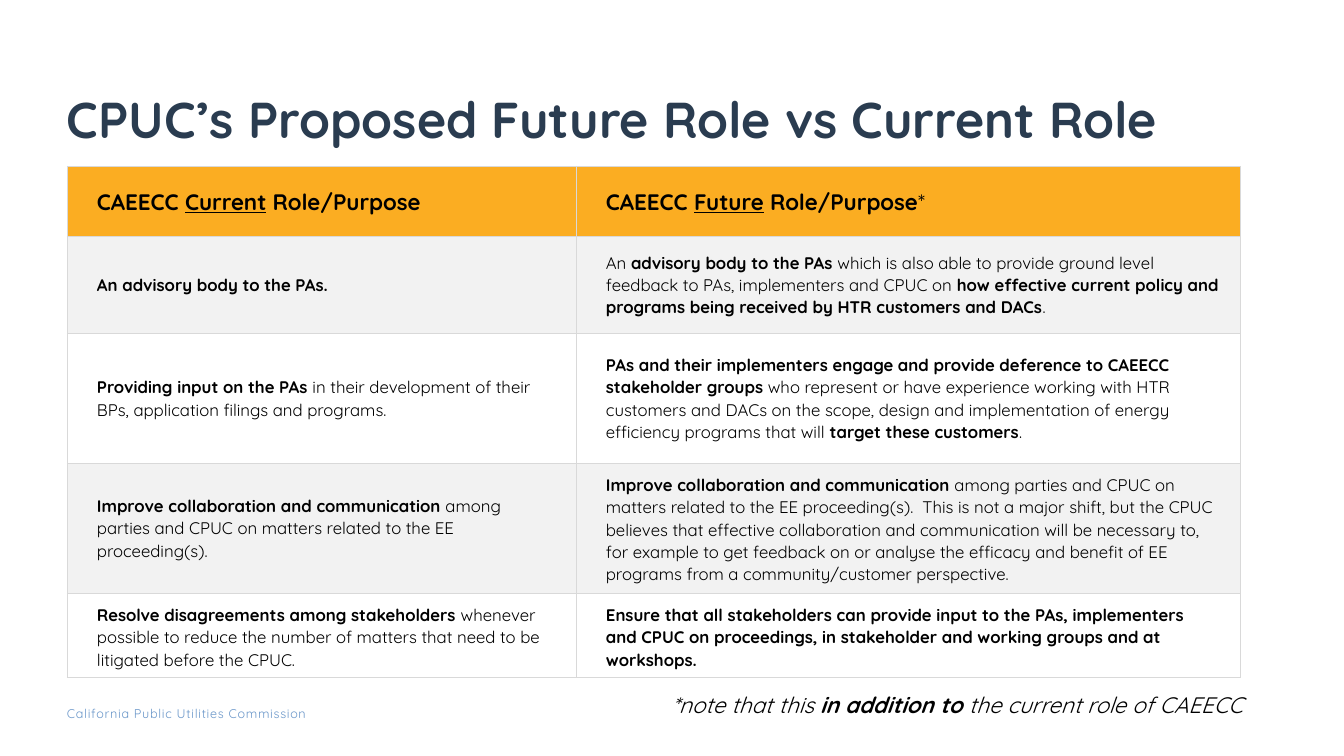
import pptx
import pptx.dml.color
import pptx.enum.text
import pptx.oxml
import pptx.oxml.ns
import pptx.util

RGBColor = pptx.dml.color.RGBColor
Anchor = pptx.enum.text.MSO_ANCHOR
Align = pptx.enum.text.PP_ALIGN
NAVY = RGBColor(0x2A, 0x3C, 0x50)
BLUE = RGBColor(0x69, 0x96, 0xC9)
GOLD = RGBColor(0xFB, 0xAD, 0x22)
GRAY = RGBColor(0xF2, 0xF2, 0xF2)
RULE = RGBColor(0xD9, 0xD9, 0xD9)
WHITE = RGBColor(0xFF, 0xFF, 0xFF)
BLACK = RGBColor(0, 0, 0)
FONT = "Quicksand"
SCALE = 914400 / 100.8
COLS = (509, 664)
ROWS = (70, 97, 130, 130, 81)
PAD = (30, 10, 20, 10)

HEADS = (
    [("CAEECC ", "b"), ("Current", "bu"), (" Role/Purpose", "b")],
    [("CAEECC ", "b"), ("Future", "bu"), (" Role/Purpose", "b"), ("*", "")],
)
ROLES = (
    ([("An advisory body to the PAs.", "b")],
     [("An ", ""), ("advisory body to the PAs ", "b"),
      ("which is also able to provide ground level feedback to PAs, "
       "implementers and CPUC on ", ""),
      ("how effective current policy and programs being received by "
       "HTR customers and DACs", "b"), (".", "")]),
    ([("Providing input on the PAs ", "b"),
      ("in their development of their BPs, application filings and programs.", "")],
     [("PAs and their implementers engage and provide deference to CAEECC "
       "stakeholder groups", "b"),
      (" who represent or have experience working with HTR customers and DACs "
       "on the scope, design and implementation of energy efficiency programs "
       "that will ", ""), ("target these customers", "b"), (".", "")]),
    ([("Improve collaboration and communication", "b"),
      (" among parties and CPUC on matters related to the EE proceeding(s).", "")],
     [("Improve collaboration and communication", "b"),
      (" among parties and CPUC on matters related to the EE proceeding(s).  "
       "This is not a major shift, but the CPUC believes that "
       "effective collaboration and communication will be necessary to, "
       "for example to get feedback on or analyse the efficacy and benefit of "
       "EE programs from a community/customer perspective.", "")]),
    ([("Resolve disagreements among stakeholders ", "b"),
      ("whenever possible to reduce the number of matters that need to be "
       "litigated before the CPUC.", "")],
     [("Ensure that all stakeholders can provide input", "b"),
      (" to the PAs, implementers and CPUC on proceedings, in stakeholder and "
       "working groups and at workshops.", "b")]),
)


def px(num):
    """Turn px into EMU."""
    return pptx.util.Emu(round(num * SCALE))


def place(shape, box):
    """Move a shape to a px box."""
    shape.left, shape.top, shape.width, shape.height = map(px, box)


def inset(item, pad):
    """Set the left, top, right and bottom margins."""
    (item.margin_left, item.margin_top,
     item.margin_right, item.margin_bottom) = map(px, pad)


def write(para, runs, size, color):
    """Add styled runs to a paragraph."""
    for text, style in runs:
        run = para.add_run()
        run.text = text
        font = run.font
        font.name = FONT
        font.size = pptx.util.Pt(size)
        font.color.rgb = color
        font.bold = "b" in style
        font.italic = "i" in style
        font.underline = "u" in style


def edge(cell):
    """Draw thin rules on the four sides of a cell."""
    props = cell._tc.get_or_add_tcPr()
    space = pptx.oxml.ns.nsdecls("a")
    for spot, side in enumerate(("lnL", "lnR", "lnT", "lnB")):
        line = pptx.oxml.parse_xml(
            f'<a:{side} {space} w="3175"><a:solidFill>'
            f'<a:srgbClr val="{RULE}"/></a:solidFill></a:{side}>')
        props.insert(spot, line)


def title(slide, box):
    """Fill the title placeholder."""
    shape = slide.shapes.title
    place(shape, box)
    frame = shape.text_frame
    frame.word_wrap = True
    frame.auto_size = pptx.enum.text.MSO_AUTO_SIZE.NONE
    frame.vertical_anchor = Anchor.BOTTOM
    inset(frame, (0, 5, 10, 5))
    para = frame.paragraphs[0]
    para.alignment = Align.LEFT
    para.line_spacing = 0.9
    write(para, [("CPUC’s Proposed Future Role vs Current Role", "b")], 36, NAVY)


def grid(slide, left, top):
    """Build the table of current and future roles."""
    box = map(px, (left, top, sum(COLS), sum(ROWS)))
    table = slide.shapes.add_table(len(ROWS), len(COLS), *box).table
    table.first_row = table.horz_banding = False
    for col, width in zip(table.columns, COLS):
        col.width = px(width)
    for row, high in zip(table.rows, ROWS):
        row.height = px(high)
    for num, texts in enumerate((HEADS,) + ROLES):
        fill = GOLD if num == 0 else GRAY if num % 2 else WHITE
        for cell, runs in zip(table.rows[num].cells, texts):
            cell.fill.solid()
            cell.fill.fore_color.rgb = fill
            cell.vertical_anchor = Anchor.MIDDLE
            inset(cell, PAD)
            edge(cell)
            para = cell.text_frame.paragraphs[0]
            para.line_spacing = 1.07
            write(para, runs, 12 if num else 16, BLACK)


def label(slide, box, runs, size, color, pad, align):
    """Add a text box and return its paragraph."""
    frame = slide.shapes.add_textbox(*map(px, box)).text_frame
    frame.word_wrap = True
    inset(frame, pad)
    para = frame.paragraphs[0]
    para.alignment = align
    write(para, runs, size, color)
    return para


def main():
    """Build and save the slide."""
    deck = pptx.Presentation()
    deck.slide_width, deck.slide_height = px(1344), px(756)
    slide = deck.slides.add_slide(deck.slide_layouts[5])
    foot = label(slide, (67, 706, 324, 15),
                 [("California Public Utilities Commission", "")],
                 9, BLUE, (0, 0, 0, 0), Align.LEFT)
    foot.runs[0].font._element.set("spc", "50")
    title(slide, (67, 40, 1210, 114))
    grid(slide, 67, 166)
    label(slide, (67, 686, 1186, 37),
          [("*note that this ", "i"), ("in addition to", "bi"),
           (" the current role of CAEECC", "i")],
          16, BLACK, (10, 5, 10, 5), Align.RIGHT)
    deck.save("out.pptx")


if __name__ == "__main__":
    main()
